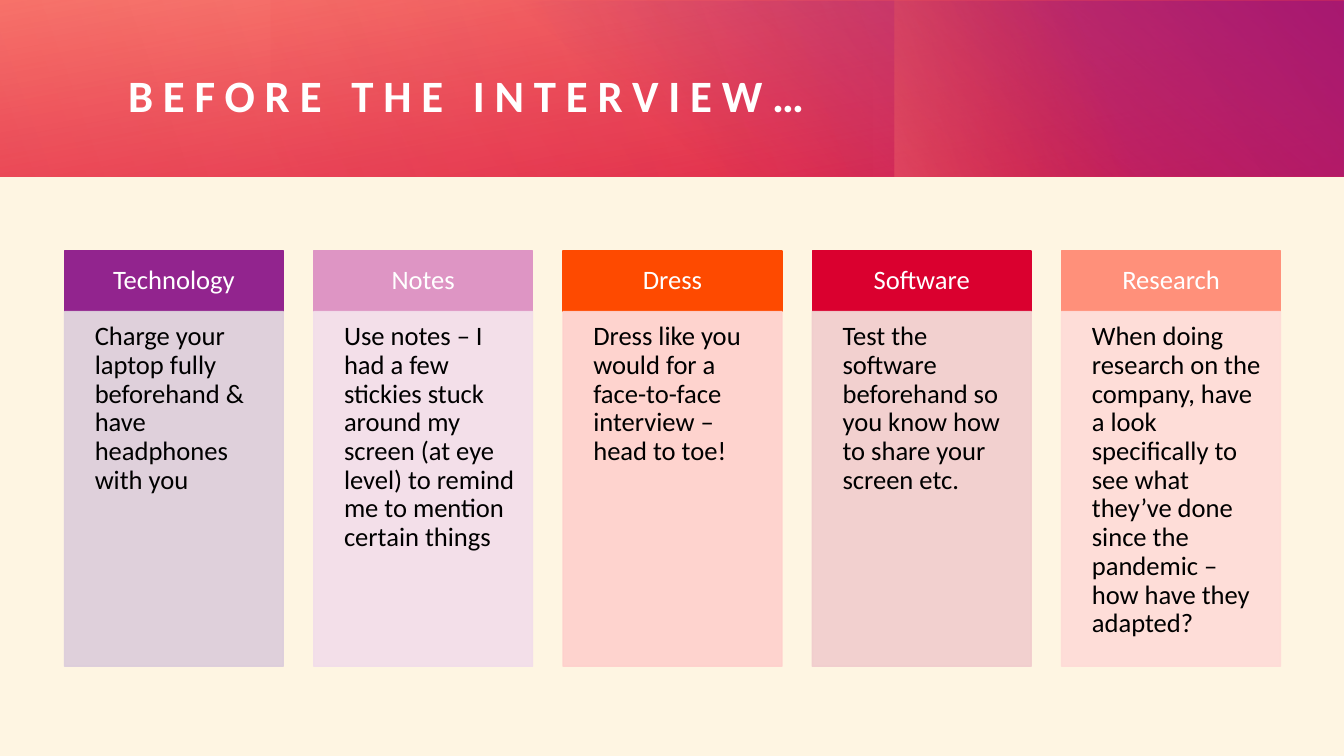
from lxml.etree import SubElement
from pptx import Presentation
from pptx.dml.color import RGBColor
from pptx.enum.shapes import MSO_SHAPE
from pptx.enum.text import MSO_ANCHOR, PP_ALIGN
from pptx.oxml.ns import qn
from pptx.util import Inches, Pt


def rgb(value):
    return RGBColor.from_string(value)


def set_opacity(shape, percents):
    """Give the shape's colours, in document order, their opacity."""
    colours = list(shape.element.spPr.iter(qn("a:srgbClr")))
    for colour, percent in zip(colours, percents):
        SubElement(colour, qn("a:alpha")).set("val", str(percent * 1000))


presentation = Presentation()
presentation.slide_width = Inches(13.33)
presentation.slide_height = Inches(7.5)
slide = presentation.slides.add_slide(presentation.slide_layouts[6])
slide.background.fill.solid()
slide.background.fill.fore_color.rgb = rgb("FEF5E2")

# Header: overlapping gradients
# box, rotation, clockwise gradient angle, stops of (position, colour, opacity)
header_layers = [
    ((0, 0, 13.33, 1.75), 0, 260, [(0, "DA002F", 83), (1, "FF907A", 100)]),
    ((4.81, 0.01, 8.52, 1.74), 0, 310, [(0.22, "92248E", 0), (0.99, "92248E", 100)]),
    ((9.87, -0.99, 1.75, 3.74), 270, 250, [(0.45, "FE4A00", 0), (0.99, "FF907A", 33)]),
    ((2.68, 0, 10.64, 1.75), 180, 330, [(0, "DA002F", 30), (0.99, "DA002F", 0)]),
    ((0, 0, 8.65, 1.75), 0, 340, [(0, "DA002F", 21), (0.99, "DA002F", 0)]),
]
for box, rotation, angle, stops in header_layers:
    layer = slide.shapes.add_shape(MSO_SHAPE.RECTANGLE, *map(Inches, box))
    layer.shadow.inherit = False
    layer.rotation = rotation
    layer.line.fill.background()
    layer.fill.gradient()
    layer.fill.gradient_angle = 360 - angle
    for gradient_stop, (position, colour, opacity) in zip(layer.fill.gradient_stops, stops):
        gradient_stop.position = position
        gradient_stop.color.rgb = rgb(colour)
    set_opacity(layer, [opacity for position, colour, opacity in stops])

title = slide.shapes.add_textbox(Inches(1.27), Inches(0.41), Inches(11.35), Inches(1.06))
title_frame = title.text_frame
title_frame.word_wrap = True
title_frame.vertical_anchor = MSO_ANCHOR.MIDDLE
title_frame.margin_left = title_frame.margin_right = 0
title_frame.margin_top = title_frame.margin_bottom = 0
paragraph = title_frame.paragraphs[0]
run = paragraph.add_run()
run.text = "BEFORE THE INTERVIEW…"
run.font.name = "Calibri"
run.font.size = Pt(32)
run.font.bold = True
run.font.color.rgb = rgb("FFFFFF")
run.font._element.set("spc", "700")

# Five columns: a heading above a tip
columns = [
    ("Technology", "92248E", "DCCDDB",
     "Charge your laptop fully beforehand & have headphones with you"),
    ("Notes", "DE95C4", "F2DDEA",
     "Use notes – I had a few stickies stuck around my screen (at eye level) "
     "to remind me to mention certain things"),
    ("Dress", "FE4A00", "FFD0CC",
     "Dress like you would for a face-to-face interview – head to toe!"),
    ("Software", "DA002F", "F1CCCD",
     "Test the software beforehand so you know how to share your screen etc."),
    ("Research", "FF907A", "FFDBD7",
     "When doing research on the company, have a look specifically to see what "
     "they’ve done since the pandemic – how have they adapted?"),
]
first_left, last_left = 0.64, 10.53
column_pitch = (last_left - first_left) / (len(columns) - 1)

for index, (heading, heading_fill, tip_fill, tip) in enumerate(columns):
    left = first_left + index * column_pitch
    cells = [
        (heading, heading_fill, "FFFFFF", 2.49, 0.6, 100, PP_ALIGN.CENTER,
         MSO_ANCHOR.MIDDLE, (0.15, 0.08, 0.15, 0.08)),
        (tip, tip_fill, "000000", 3.09, 3.52, 90, PP_ALIGN.LEFT,
         MSO_ANCHOR.TOP, (0.3, 0.11, 0.15, 0.17)),
    ]
    for text, fill, text_colour, top, height, opacity, alignment, anchor, margins in cells:
        cell = slide.shapes.add_shape(
            MSO_SHAPE.RECTANGLE, Inches(left), Inches(top), Inches(2.17), Inches(height))
        cell.shadow.inherit = False
        cell.fill.solid()
        cell.fill.fore_color.rgb = rgb(fill)
        cell.line.color.rgb = rgb(fill)
        cell.line.width = Pt(1)
        if opacity < 100:
            set_opacity(cell, [opacity, opacity])
        frame = cell.text_frame
        frame.word_wrap = True
        frame.vertical_anchor = anchor
        (frame.margin_left, frame.margin_top,
         frame.margin_right, frame.margin_bottom) = map(Inches, margins)
        paragraph = frame.paragraphs[0]
        paragraph.text = text
        paragraph.alignment = alignment
        paragraph.line_spacing = 0.9
        paragraph.font.name = "Calibri"
        paragraph.font.size = Pt(19)
        paragraph.font.color.rgb = rgb(text_colour)

presentation.save("out.pptx")
